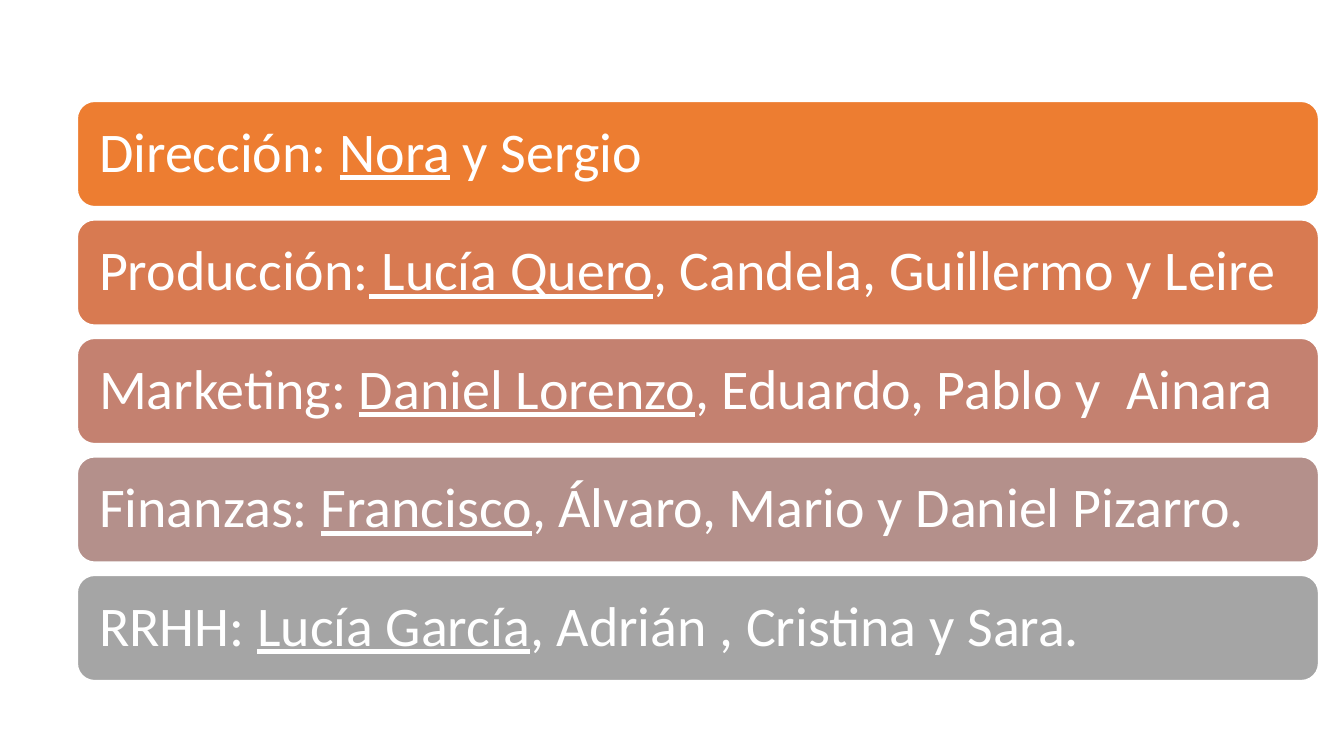
from dataclasses import dataclass
from pptx import Presentation
from pptx.dml.color import RGBColor as Rgb
from pptx.enum.shapes import MSO_SHAPE as Shape
from pptx.enum.text import MSO_ANCHOR as Anchor, PP_ALIGN as Align
from pptx.util import Pt

SCALE = 914400 / 100.8


@dataclass(frozen=True)
class Theme:
    fills: tuple = ("ED7D31", "D87A51", "C48170", "B4908B", "A5A5A5")
    white: str = "FFFFFF"
    face: str = "Calibri"
    size: float = 40
    edge: float = 1.5


THEME = Theme()
TEAMS = (
    ("Dirección: ", "Nora", " y Sergio"),
    ("Producción:", " Lucía Quero", ", Candela, Guillermo y Leire"),
    ("Marketing: ", "Daniel Lorenzo", ", Eduardo, Pablo y  Ainara"),
    ("Finanzas: ", "Francisco", ", Álvaro, Mario y Daniel Pizarro."),
    ("RRHH: ", "Lucía García", ", Adrián , Cristina y Sara."),
)


def px(value):
    return round(value * SCALE)


def apply(item, values):
    for name, value in values.items():
        setattr(item, name, value)


def add_team(slide, box, color, team):
    bar = slide.shapes.add_shape(Shape.ROUNDED_RECTANGLE, *map(px, box))
    bar.shadow.inherit = False
    bar.fill.solid()
    bar.fill.fore_color.rgb = Rgb.from_string(color)
    bar.line.color.rgb = Rgb.from_string(THEME.white)
    bar.line.width = Pt(THEME.edge)
    frame = bar.text_frame
    sides = ("left", "top", "right", "bottom")
    apply(frame, {f"margin_{side}": px(17) for side in sides})
    apply(frame, {"word_wrap": True, "vertical_anchor": Anchor.MIDDLE})
    para = frame.paragraphs[0]
    apply(para, {"alignment": Align.LEFT, "line_spacing": 0.9})
    for text, under in zip(team, (False, True, False)):
        run = para.add_run()
        run.text = text
        apply(run.font, {"name": THEME.face, "size": Pt(THEME.size),
                         "underline": under})
        run.font.color.rgb = Rgb.from_string(THEME.white)


def add_list(slide, box, high):
    left, top, width, height = box
    step = (height - high) / (len(TEAMS) - 1)
    for row, (color, team) in enumerate(zip(THEME.fills, TEAMS)):
        add_team(slide, (left, top + row * step, width, high), color, team)


def main():
    deck = Presentation()
    apply(deck, {"slide_width": px(1344), "slide_height": px(756)})
    slide = deck.slides.add_slide(deck.slide_layouts[6])
    add_list(slide, (77, 101, 1242, 580), 106)
    deck.save("out.pptx")


if __name__ == "__main__":
    main()
